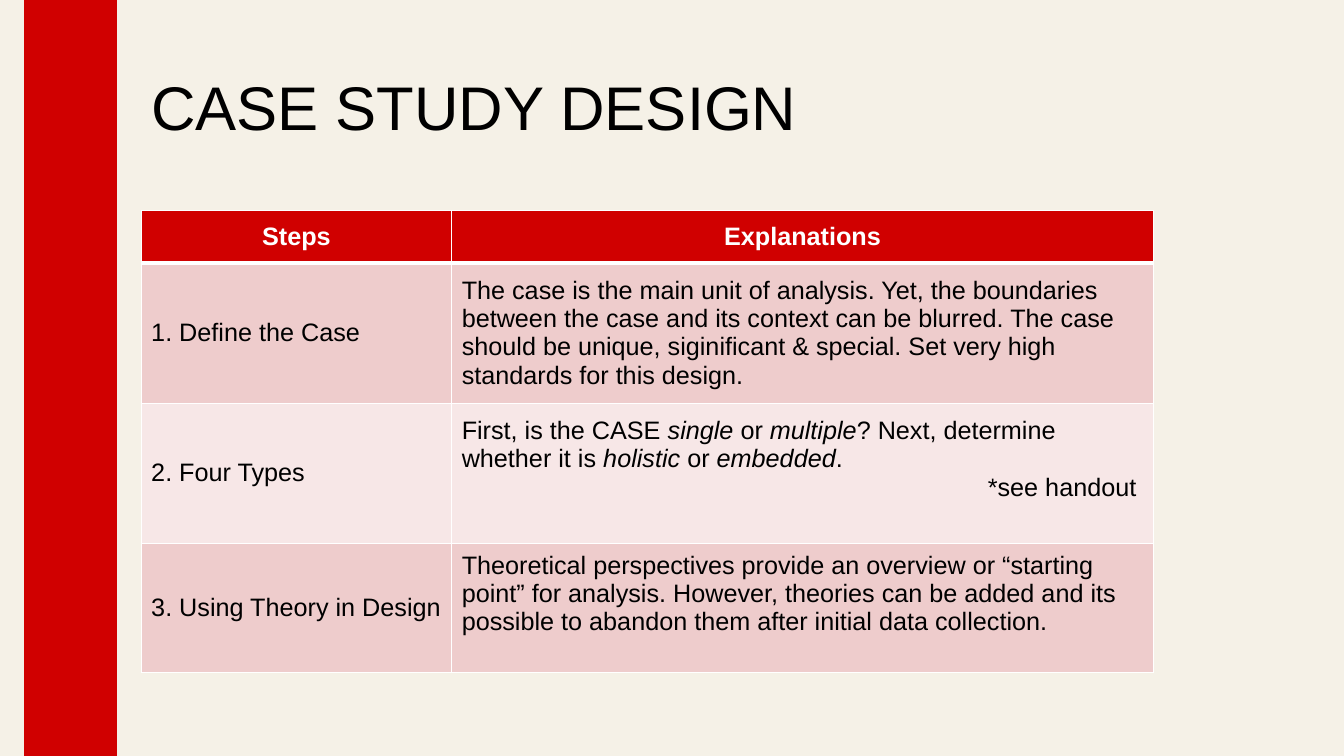
"""Build the case study design slide with its table of steps."""
from lxml import etree
from pptx import Presentation
from pptx import util as u
from pptx.dml.color import RGBColor
from pptx.enum import shapes, text
from pptx.oxml import ns

RED, CREAM, WHITE, BLACK = "D00000", "F5F1E7", "FFFFFF", "000000"
BANDS = ["EECCCC", "F7E7E7"]


def paint(fill, colour):
    fill.solid()
    fill.fore_color.rgb = RGBColor.from_string(colour)


def add_border(cell, side, points):
    line = etree.SubElement(cell._tc.get_or_add_tcPr(), ns.qn(f"a:ln{side}"), w=str(u.Pt(points)))
    solid = etree.SubElement(line, ns.qn("a:solidFill"))
    etree.SubElement(solid, ns.qn("a:srgbClr"), val=WHITE)


deck = Presentation()
deck.slide_width, deck.slide_height = u.Inches(13.33), u.Inches(7.5)
page = deck.slides.add_slide(deck.slide_layouts[6])
paint(page.background.fill, CREAM)

bar = page.shapes.add_shape(shapes.MSO_SHAPE.RECTANGLE, u.Inches(0.24), 0, u.Inches(0.92), deck.slide_height)
bar.shadow.inherit = False
paint(bar.fill, RED)
bar.line.fill.background()

title = page.shapes.add_textbox(u.Inches(1.4), u.Inches(0.4), u.Inches(11.02), u.Inches(1.39)).text_frame
title.word_wrap = True
title.vertical_anchor = text.MSO_ANCHOR.MIDDLE
heading = title.paragraphs[0]
heading.text = "CASE STUDY DESIGN"
heading.line_spacing = 0.9
heading.font.name, heading.font.size = "Arial", u.Pt(44)
paint(heading.font.fill, BLACK)

rows = [
    ("Steps", "Explanations"),
    ("1. Define the Case",
     "The case is the main unit of analysis. Yet, the boundaries between the case and its context can be blurred. "
     "The case should be unique, siginificant & special. Set very high standards for this design."),
    ("2. Four Types",
     "First, is the CASE _single_ or _multiple_? Next, determine whether it is _holistic_ or _embedded_."
     "\n*see handout "),
    ("3. Using Theory in Design",
     "Theoretical perspectives provide an overview or “starting point” for analysis. "
     "However, theories can be added and its possible to abandon them after initial data collection."),
]
row_heights = [0.52, 1.39, 1.39, 1.22]
column_widths = [3.08, 6.96]

table = page.shapes.add_table(
    len(rows), len(column_widths), u.Inches(1.4), u.Inches(2.09),
    u.Inches(sum(column_widths)), u.Inches(sum(row_heights))).table
for column, width in zip(table.columns, column_widths):
    column.width = u.Inches(width)

for row_index, (row, height) in enumerate(zip(rows, row_heights)):
    table.rows[row_index].height = u.Inches(height)
    is_header = row_index == 0
    for column_index, content in enumerate(row):
        cell = table.cell(row_index, column_index)
        for side in "LRTB":
            thick = (is_header and side == "B") or (row_index == 1 and side == "T")
            add_border(cell, side, 3 if thick else 1)
        paint(cell.fill, RED if is_header else BANDS[(row_index - 1) % 2])
        cell.vertical_anchor = text.MSO_ANCHOR.MIDDLE
        if row_index >= 2 and column_index == 1:
            cell.margin_bottom = u.Inches(0.33)
        for line_index, line in enumerate(content.split("\n")):
            frame = cell.text_frame
            para = frame.add_paragraph() if line_index else frame.paragraphs[0]
            if is_header:
                para.alignment = text.PP_ALIGN.CENTER
            elif line_index:
                para.alignment = text.PP_ALIGN.RIGHT
            para.font.name, para.font.size, para.font.bold = "Arial", u.Pt(18), is_header
            paint(para.font.fill, WHITE if is_header else BLACK)
            for part_index, part in enumerate(line.split("_")):
                span = para.add_run()
                span.text = part
                if part_index % 2:
                    span.font.italic = True

deck.save("out.pptx")
